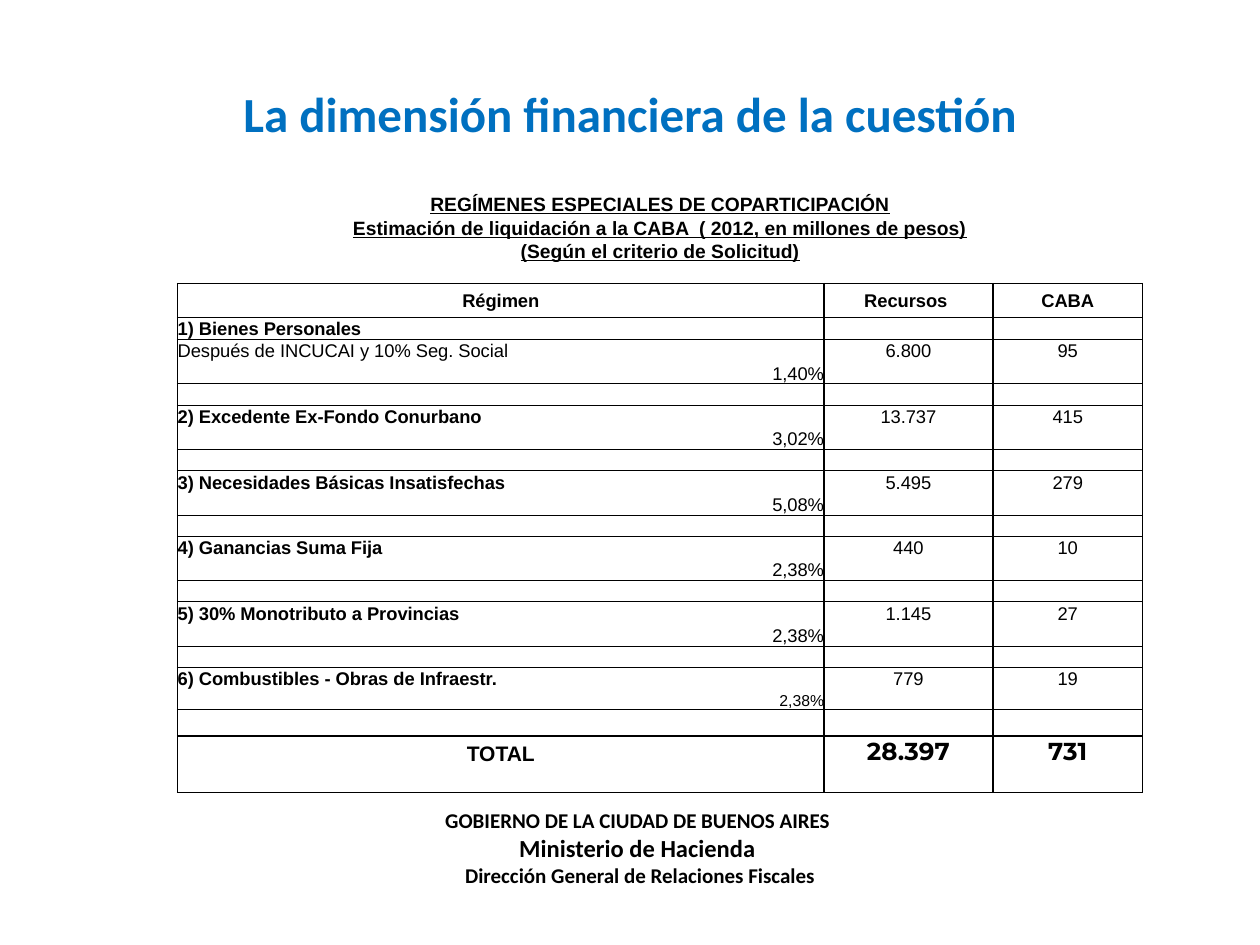
from pptx import Presentation
from pptx.dml.color import RGBColor
from pptx.enum.text import MSO_ANCHOR, PP_ALIGN
from pptx.util import Inches, Pt
from lxml import etree

LEFT, CENTER, RIGHT = PP_ALIGN.LEFT, PP_ALIGN.CENTER, PP_ALIGN.RIGHT
MIDDLE, BOTTOM = MSO_ANCHOR.MIDDLE, MSO_ANCHOR.BOTTOM
TITLE_ONLY = 5
COLORS = {"title": "0070C0", "ink": "000000", "paper": "FFFFFF"}
NO_STYLE = "{2D5ABB26-0587-4C30-8999-92F81FD0307C}"
DRAWING = "{http://schemas.openxmlformats.org/drawingml/2006/main}"

HEADINGS = [
    "REGÍMENES ESPECIALES DE COPARTICIPACIÓN",
    "Estimación de liquidación a la CABA  ( 2012, en millones de pesos)",
    "(Según el criterio de Solicitud)",
]
COLUMNS = ["Régimen", "Recursos ", "CABA"]
REGIMES = [
    ("1) Bienes Personales", "1,40%", "6.800", "95"),
    ("2) Excedente Ex-Fondo Conurbano", "3,02%", "13.737", "415"),
    ("3) Necesidades Básicas Insatisfechas", "5,08%", "5.495", "279"),
    ("4) Ganancias Suma Fija", "2,38%", "440", "10"),
    ("5) 30% Monotributo a Provincias", "2,38%", "1.145", "27"),
    ("6) Combustibles - Obras de Infraestr.", "2,38%", "779", "19"),
]
FIRST_NOTE = "Después de INCUCAI y 10% Seg. Social"
TOTALS = ["TOTAL", "28.397", "731"]
COLUMN_WIDTHS = [5.13, 1.34, 1.19]
ROW_HEIGHTS = [0.17] * 4 + [0.27] + [0.17, 0.17, 0.16] * len(REGIMES) + [0.21, 0.24, 0.21]
HEADER_ROW = 4
FIRST_REGIME_ROW = HEADER_ROW + 1
TOTAL_ROW = FIRST_REGIME_ROW + 3 * len(REGIMES)


def write(paragraph, text, size, font, color="ink", bold=True, underline=False, align=CENTER):
    paragraph.alignment = align
    run = paragraph.add_run()
    run.text = text
    run.font.size = Pt(size)
    run.font.name = font
    run.font.bold = bold
    run.font.underline = underline
    run.font.color.rgb = RGBColor.from_string(COLORS[color])


def add_title(slide, box):
    title = slide.shapes.title
    title.left, title.top, title.width, title.height = (Inches(v) for v in box)
    title.text_frame.vertical_anchor = MIDDLE
    write(title.text_frame.paragraphs[0], "La dimensión financiera de la cuestión",
          28, "Calibri", color="title")


def add_footer(slide, box):
    frame = slide.shapes.add_textbox(*(Inches(v) for v in box)).text_frame
    frame.word_wrap = True
    frame.vertical_anchor = MIDDLE
    lines = [
        ("GOBIERNO DE LA CIUDAD DE BUENOS AIRES ", 12),
        ("Ministerio de Hacienda ", 14),
        ("Dirección General de Relaciones Fiscales", 12),
    ]
    for i, (line, size) in enumerate(lines):
        paragraph = frame.add_paragraph() if i else frame.paragraphs[0]
        write(paragraph, line, size, "Calibri")


def set_borders(cell, widths):
    """Draw the sides named in widths (L, R, T, B), in points."""
    properties = cell._tc.get_or_add_tcPr()
    for side in "LRTB":
        if side in widths:
            line = etree.SubElement(properties, f"{DRAWING}ln{side}", w=str(Pt(widths[side])))
            fill = etree.SubElement(line, f"{DRAWING}solidFill")
            etree.SubElement(fill, f"{DRAWING}srgbClr", val=COLORS["ink"])


def row_borders(row):
    """Heading rows are open; each later group of three rows is one framed block."""
    if row < HEADER_ROW - 1:
        return {}
    if row == HEADER_ROW - 1:
        return {"B": 1}
    if row == HEADER_ROW:
        return dict.fromkeys("LRTB", 1)
    group, line = divmod(row - FIRST_REGIME_ROW, 3)
    last = len(REGIMES)
    borders = {"L": 1, "R": 1}
    if line == 0:
        borders["T"] = 1 if group in (0, last) else 0.5
    elif line == 2:
        borders["B"] = 1 if group >= last - 1 else 0.5
    return borders


def format_grid(table):
    for column, width in zip(table.columns, COLUMN_WIDTHS):
        column.width = Inches(width)
    for r, height in enumerate(ROW_HEIGHTS):
        table.rows[r].height = Inches(height)
        for cell in table.rows[r].cells:
            cell.margin_left = cell.margin_right = cell.margin_top = cell.margin_bottom = 0
            cell.vertical_anchor = BOTTOM
            set_borders(cell, row_borders(r))
            cell.fill.solid()
            cell.fill.fore_color.rgb = RGBColor.from_string(COLORS["paper"])
            # Keeps blank cells from stretching their row
            cell.text_frame.paragraphs[0]._p.get_or_add_endParaRPr().set("sz", "900")


def add_regimes_table(slide, box):
    table = slide.shapes.add_table(len(ROW_HEIGHTS), len(COLUMNS),
                                   *(Inches(v) for v in box)).table
    table.first_row = table.horz_banding = False
    table._tbl.tblPr.find(f"{DRAWING}tableStyleId").text = NO_STYLE
    format_grid(table)

    def put(row, column, text, size=10.5, font="Arial", **style):
        write(table.cell(row, column).text_frame.paragraphs[0], text, size, font, **style)

    for r, heading in enumerate(HEADINGS):
        table.cell(r, 0).merge(table.cell(r, len(COLUMNS) - 1))
        put(r, 0, heading, 11, underline=True)
    table.cell(0, 0).vertical_anchor = MIDDLE

    for c, label in enumerate(COLUMNS):
        table.cell(HEADER_ROW, c).vertical_anchor = MIDDLE
        put(HEADER_ROW, c, label)

    for i, (name, share, resources, city) in enumerate(REGIMES):
        top = FIRST_REGIME_ROW + 3 * i
        put(top if i == 0 else top + 1, 0, name, align=LEFT)
        put(top + 1, 1, resources, bold=False)
        put(top + 1, 2, city, bold=False)
        put(top + 2, 0, share, 9 if i == len(REGIMES) - 1 else 10.5, bold=False, align=RIGHT)
    put(FIRST_REGIME_ROW + 1, 0, FIRST_NOTE, bold=False, align=LEFT)

    label, *amounts = TOTALS
    put(TOTAL_ROW + 1, 0, label, 12)
    for c, amount in enumerate(amounts, 1):
        put(TOTAL_ROW + 1, c, amount, 14, "Montserrat")


def main():
    deck = Presentation()
    deck.slide_width, deck.slide_height = Inches(10), Inches(7.5)
    slide = deck.slides.add_slide(deck.slide_layouts[TITLE_ONLY])
    add_title(slide, (0.75, 0.47, 8.5, 0.86))
    add_footer(slide, (1.64, 6.33, 6.88, 0.79))
    add_regimes_table(slide, (1.41, 1.53, sum(COLUMN_WIDTHS), sum(ROW_HEIGHTS)))
    deck.save("out.pptx")


if __name__ == "__main__":
    main()
